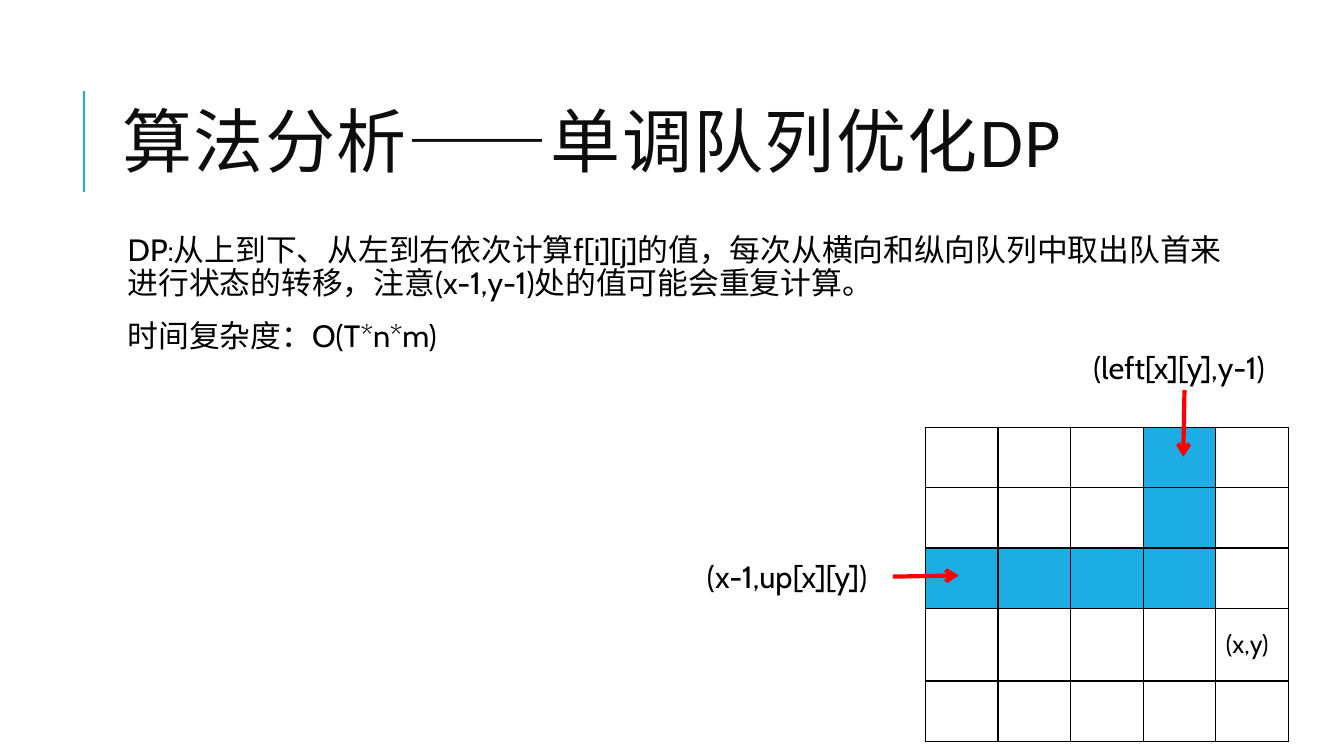
from dataclasses import dataclass

from lxml import etree
from pptx import Presentation
from pptx.dml.color import RGBColor
from pptx.enum import shapes, text
from pptx.oxml import ns
from pptx.util import Cm, Pt


@dataclass(frozen=True)
class Theme:
    accent: str = "1CADE4"
    arrow: str = "FF0000"
    heading: str = "0D0D0D"
    ink: str = "000000"
    paper: str = "FFFFFF"
    heading_font: str = "Calibri"
    body_font: str = "Cabin"
    heading_size: int = 50
    body_size: int = 22
    cell_size: int = 18


THEME = Theme()

TITLE = "算法分析——单调队列优化DP"
BODY = [
    "DP:从上到下、从左到右依次计算f[i][j]的值，每次从横向和纵向队列中取出队首"
    "来进行状态的转移，注意(x-1,y-1)处的值可能会重复计算。",
    "时间复杂度：O(T*n*m)",
]
# "#" marks a cell visited by the two queues
GRID = ["...#.", "...#.", "####.", ".....", "....."]
TARGET = (3, 4)
TARGET_TEXT = "(x,y)"
GRID_LEFT, GRID_TOP = 23.32, 10.77
COLUMN_WIDTH, ROW_HEIGHT, TARGET_ROW_HEIGHT = 1.83, 1.52, 1.83

LABEL_SIZE = (5.49, 1.19)
# label, its corner, then where its arrow starts and ends
QUEUE_HEADS = [
    ("(left[x][y],y-1)", (26.97, 8.66), (29.85, 9.83), (29.82, 11.51)),
    ("(x-1,up[x][y])", (17.09, 13.92), (22.5, 14.53), (24.16, 14.5)),
]


def add_child(parent, tag, **attributes):
    return etree.SubElement(parent, ns.qn(tag), attributes)


def style(para, size, font=THEME.body_font, color=THEME.ink):
    para.font.size = Pt(size)
    para.font.name = font
    para.font.color.rgb = RGBColor.from_string(color)


def add_text(page, lines, left, top, width, height):
    box = page.shapes.add_textbox(Cm(left), Cm(top), Cm(width), Cm(height))
    frame = box.text_frame
    frame.word_wrap = True
    frame.text = "\n".join(lines)
    return frame


def add_line(page, start, end, color, width):
    line = page.shapes.add_connector(
        shapes.MSO_CONNECTOR.STRAIGHT, *(Cm(value) for value in start + end))
    line.line.color.rgb = RGBColor.from_string(color)
    line.line.width = Pt(width)
    add_child(line._element.spPr, "a:effectLst")
    return line


def add_title(page):
    add_line(page, (2.12, 4.83), (2.12, 2.29), THEME.accent, 1.5)
    frame = add_text(page, [TITLE], 2.84, 1.63, 27, 4.17)
    frame.vertical_anchor = text.MSO_ANCHOR.MIDDLE
    para = frame.paragraphs[0]
    para.line_spacing = 0.8
    style(para, THEME.heading_size, THEME.heading_font, THEME.heading)
    para.runs[0].font._element.set("spc", "100")


def add_body(page):
    frame = add_text(page, BODY, 2.84, 5.79, 28.37, 10.03)
    frame.margin_left = frame.margin_right = Cm(0.13)
    for para in frame.paragraphs:
        para.line_spacing = 0.9
        para.space_before, para.space_after = Pt(12), Pt(2)
        para._p.get_or_add_pPr().set("marL", str(Cm(0.25)))
        style(para, THEME.body_size)


def add_borders(cell):
    properties = cell._tc.get_or_add_tcPr()
    for side in ("a:lnL", "a:lnR", "a:lnT", "a:lnB"):
        border = add_child(properties, side, w=str(Pt(1)))
        add_child(add_child(border, "a:solidFill"), "a:srgbClr", val=THEME.ink)


def add_grid(page):
    heights = [TARGET_ROW_HEIGHT if row == TARGET[0] else ROW_HEIGHT
               for row in range(len(GRID))]
    columns = len(GRID[0])
    table = page.shapes.add_table(
        len(GRID), columns, Cm(GRID_LEFT), Cm(GRID_TOP),
        Cm(COLUMN_WIDTH * columns), Cm(sum(heights))).table
    table.first_row = table.horz_banding = False
    for column in table.columns:
        column.width = Cm(COLUMN_WIDTH)
    for row, height in enumerate(heights):
        table.rows[row].height = Cm(height)
        for column, mark in enumerate(GRID[row]):
            cell = table.cell(row, column)
            add_borders(cell)
            cell.fill.solid()
            cell.fill.fore_color.rgb = RGBColor.from_string(
                THEME.accent if mark == "#" else THEME.paper)
            style(cell.text_frame.paragraphs[0], THEME.cell_size)
    target = table.cell(*TARGET)
    target.text_frame.text = TARGET_TEXT
    target.vertical_anchor = text.MSO_ANCHOR.MIDDLE
    style(target.text_frame.paragraphs[0], THEME.cell_size)


def add_queue_heads(page):
    for label, corner, start, end in QUEUE_HEADS:
        para = add_text(page, [label], *corner, *LABEL_SIZE).paragraphs[0]
        para.alignment = text.PP_ALIGN.CENTER
        style(para, THEME.body_size)
        arrow = add_line(page, start, end, THEME.arrow, 3)
        add_child(arrow.line._get_or_add_ln(), "a:tailEnd", type="arrow")


def main():
    deck = Presentation()
    deck.slide_width, deck.slide_height = Cm(33.87), Cm(19.05)
    page = deck.slides.add_slide(deck.slide_layouts[6])
    add_title(page)
    add_body(page)
    add_grid(page)
    add_queue_heads(page)
    deck.save("out.pptx")


if __name__ == "__main__":
    main()
